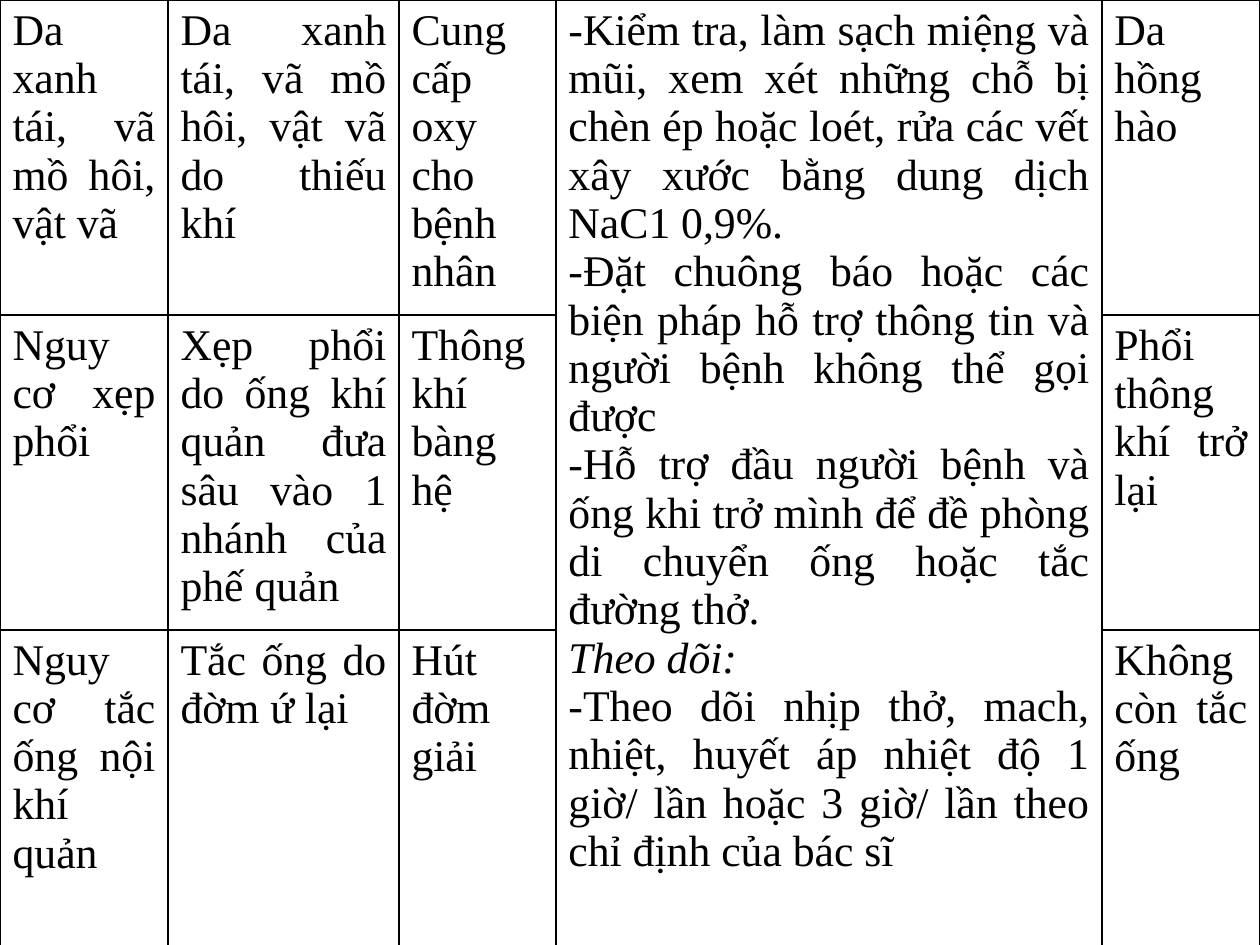
from pptx import Presentation
from pptx.dml.color import RGBColor
from pptx.enum.text import PP_ALIGN
from pptx.oxml import parse_xml
from pptx.oxml.ns import nsdecls
from pptx.util import Pt

JUST = PP_ALIGN.JUSTIFY
SCALE = 914400 // 126
COLORS = {"ink": "000000", "paper": "FFFFFF"}
FONT = {"name": "Times New Roman", "size": Pt(25), "bold": False}
FLAGS = {"first_row": False, "horz_banding": False}
COLS = [168, 231, 157, 546, 158]
ROW = 315
CARE_COL = 3
HEAD = "Theo dõi:"
CARE = [
    "-Kiểm tra, làm sạch miệng và mũi, xem xét những chỗ bị chèn ép hoặc loét, "
    "rửa các vết xây xước bằng dung dịch NaC1 0,9%.",
    "-Đặt chuông báo hoặc các biện pháp hỗ trợ thông tin và người bệnh "
    "không thể gọi được",
    "-Hỗ trợ đầu người bệnh và ống khi trở mình để đề phòng di chuyển ống "
    "hoặc tắc đường thở.",
    HEAD,
    "-Theo dõi nhịp thở, mach, nhiệt, huyết áp nhiệt độ 1 giờ/ lần hoặc "
    "3 giờ/ lần theo chỉ định của bác sĩ",
]
ROWS = [
    [["Da xanh tái, vã mồ hôi, vật vã "],
     ["Da xanh tái, vã mồ hôi, vật vã do thiếu khí"],
     ["Cung cấp oxy cho bệnh nhân"], CARE, ["Da hồng hào"]],
    [["Nguy cơ xẹp phổi"],
     ["Xẹp phổi do ống khí quản đưa sâu vào 1 nhánh của phế quản"],
     ["Thông khí bàng hệ"], [], ["Phổi thông khí trở lại "]],
    [["Nguy cơ tắc ống nội khí quản"], ["Tắc ống do đờm ứ lại"],
     ["Hút đờm giải"], [], ["Không còn tắc ống"]],
]


def px(num):
    """Turn px into EMU."""
    return num * SCALE


def apply(item, vals):
    """Set each named value on an item."""
    for key, val in vals.items():
        setattr(item, key, val)


def color(key):
    """Look up a colour by its role."""
    return RGBColor.from_string(COLORS[key])


def frame(cell):
    """Give a cell its borders and plain fill."""
    props = cell._tc.get_or_add_tcPr()
    for side in "LRTB":
        props.append(parse_xml(
            f'<a:ln{side} {nsdecls("a")} w="{Pt(1)}"><a:solidFill>'
            f'<a:srgbClr val="{COLORS["ink"]}"/></a:solidFill></a:ln{side}>'))
    cell.fill.solid()
    cell.fill.fore_color.rgb = color("paper")


def write(cell, lines):
    """Write justified paragraphs into a cell."""
    body = cell.text_frame
    for num, line in enumerate(lines):
        para = body.add_paragraph() if num else body.paragraphs[0]
        para.alignment = JUST
        run = para.add_run()
        run.text = line
        apply(run.font, {**FONT, "italic": line == HEAD})
        run.font.color.rgb = color("ink")


def add_grid(slide):
    """Add the care plan table."""
    grid = slide.shapes.add_table(
        len(ROWS), len(COLS), 0, 0, px(sum(COLS)), px(ROW * len(ROWS))).table
    apply(grid, FLAGS)
    for col, width in zip(grid.columns, COLS):
        col.width = px(width)
    for row, texts in zip(grid.rows, ROWS):
        row.height = px(ROW)
        for cell, lines in zip(row.cells, texts):
            frame(cell)
            write(cell, lines)
    grid.cell(0, CARE_COL).merge(grid.cell(len(ROWS) - 1, CARE_COL))


def main():
    """Build and save the slide."""
    deck = Presentation()
    apply(deck, {"slide_width": px(1260), "slide_height": px(945)})
    add_grid(deck.slides.add_slide(deck.slide_layouts[6]))
    deck.save("out.pptx")


if __name__ == "__main__":
    main()
